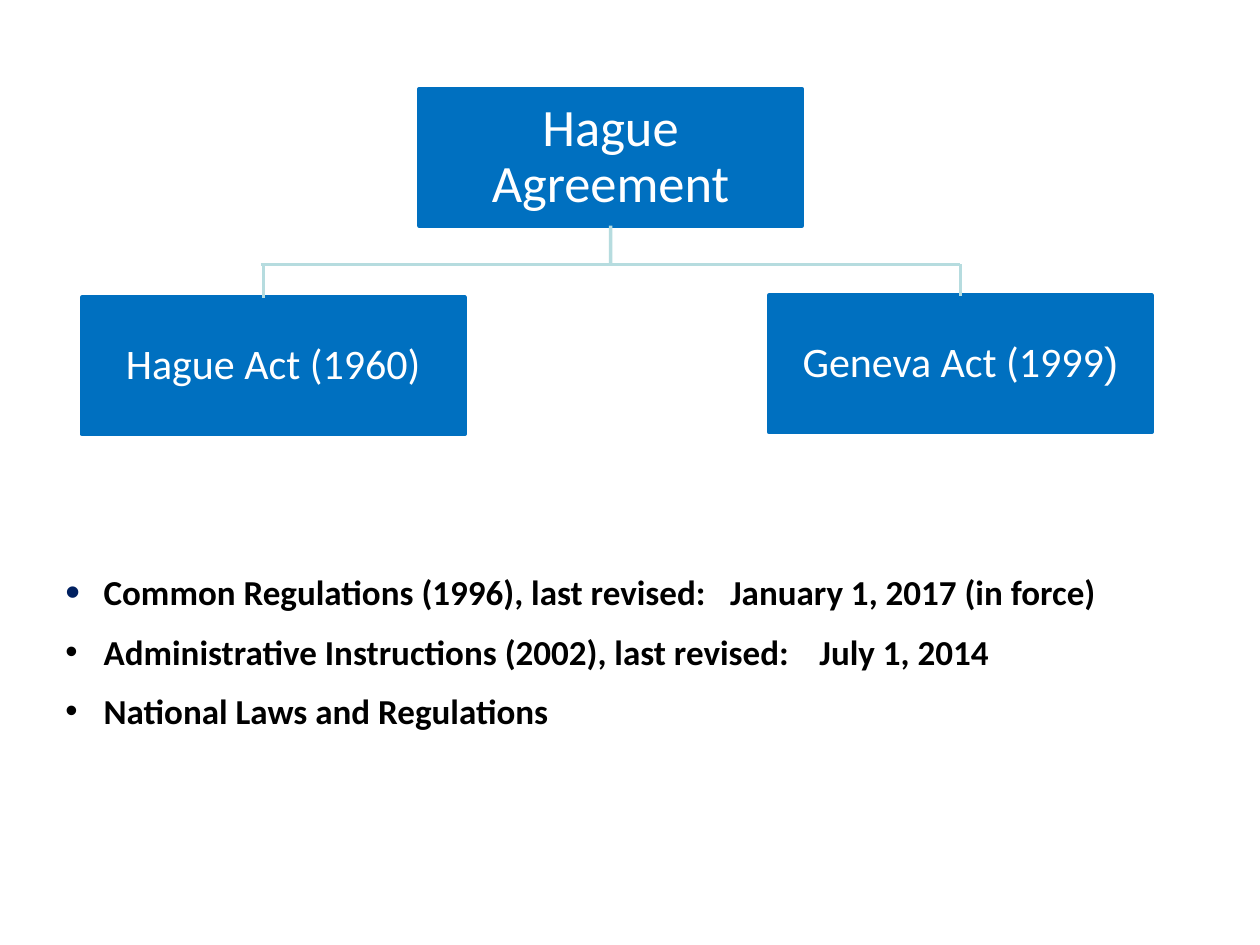
from lxml import etree
from pptx import Presentation
from pptx.dml.color import RGBColor
from pptx.enum.shapes import MSO_CONNECTOR, MSO_SHAPE
from pptx.enum.text import MSO_ANCHOR, PP_ALIGN
from pptx.oxml.ns import qn
from pptx.util import Cm, Pt

RECT = MSO_SHAPE.RECTANGLE
LINE = MSO_CONNECTOR.STRAIGHT
MID = MSO_ANCHOR.MIDDLE
CENTER = PP_ALIGN.CENTER
JUST = PP_ALIGN.JUSTIFY

BLUE = RGBColor(0x00, 0x70, 0xC0)
NAVY = RGBColor(0x00, 0x20, 0x60)
TEAL = RGBColor(0xB6, 0xDC, 0xDF)
WHITE = RGBColor(0xFF, 0xFF, 0xFF)
BLACK = RGBColor(0x00, 0x00, 0x00)
FONT = "Calibri"
TOP, BOTTOM = 0, 2


class Deck:
    def __init__(self, slide):
        self.slide = slide

    def run(self, para, text, size, color, bold=False, font=FONT):
        run = para.add_run()
        run.text = text
        run.font.name = font
        run.font.size = Pt(size)
        run.font.bold = bold
        run.font.color.rgb = color

    def box(self, left, top, size, *parts):
        box = self.slide.shapes.add_shape(RECT, Cm(left), Cm(top), Cm(7.72), Cm(2.75))
        box.shadow.inherit = False
        box.fill.solid()
        box.fill.fore_color.rgb = BLUE
        box.line.color.rgb = BLUE
        box.line.width = Pt(2.5)
        frame = box.text_frame
        frame.word_wrap = True
        frame.vertical_anchor = MID
        frame.margin_left = frame.margin_right = Cm(0.05)
        frame.margin_top = frame.margin_bottom = Cm(0.05)
        para = frame.paragraphs[0]
        para.alignment = CENTER
        para.line_spacing = 0.9
        for text, font in parts:
            self.run(para, text, size, WHITE, font=font)
        return box

    def line(self, x1, y1, x2, y2, start=None, end=None):
        line = self.slide.shapes.add_connector(LINE, Cm(x1), Cm(y1), Cm(x2), Cm(y2))
        if start:
            line.begin_connect(start, BOTTOM)
        if end:
            line.end_connect(end, TOP)
        line.line.color.rgb = TEAL
        line.line.width = Pt(2)
        etree.SubElement(line._element.spPr, qn("a:effectLst"))

    def bullet(self, para, color, scale, stop):
        props = para._p.get_or_add_pPr()
        props.set("marL", str(Cm(0.77)))
        props.set("indent", str(-Cm(0.77)))
        tint = etree.SubElement(props, qn("a:buClr"))
        etree.SubElement(tint, qn("a:srgbClr"), val=str(color))
        etree.SubElement(props, qn("a:buSzPct"), val=str(scale * 1000))
        etree.SubElement(props, qn("a:buFont"), typeface="Arial")
        etree.SubElement(props, qn("a:buChar"), char="•")
        if stop:
            tabs = etree.SubElement(props, qn("a:tabLst"))
            etree.SubElement(tabs, qn("a:tab"), pos=str(Cm(stop)), algn="l")

    def bullets(self, left, top, width, height, items):
        area = self.slide.shapes.add_textbox(Cm(left), Cm(top), Cm(width), Cm(height))
        frame = area.text_frame
        frame.word_wrap = True
        for i, (text, color, scale, stop) in enumerate(items):
            para = frame.add_paragraph() if i else frame.paragraphs[0]
            self.bullet(para, color, scale, stop)
            para.alignment = JUST
            if i:
                para.space_before = Pt(10)
            self.run(para, text, 20, BLACK, bold=True)


def main():
    prs = Presentation()
    prs.slide_width, prs.slide_height = Cm(25.4), Cm(19.05)
    deck = Deck(prs.slides.add_slide(prs.slide_layouts[6]))

    root = deck.box(8.45, 1.8, 30, ("Hague Agreement", FONT))
    deck.box(1.65, 6, 24, ("Hague Act (1960)", FONT))
    geneva = deck.box(15.5, 5.96, 24, ("Geneva Act (1999", FONT), (")", "Arial"))

    deck.bullets(1.07, 11.38, 23.7, 3.66, [
        ("Common Regulations (1996), last revised:\tJanuary 1, 2017 (in force)",
         NAVY, 120, 13.4),
        ("Administrative Instructions (2002), last revised:\tJuly 1, 2014",
         BLACK, 100, 15.2),
        ("National Laws and Regulations", BLACK, 100, None),
    ])

    mid, bar = 12.31, 5.33
    deck.line(mid, 4.55, mid, bar, start=root)
    deck.line(mid, bar, 19.36, bar)
    deck.line(5.26, bar, mid, bar)
    deck.line(5.31, bar, 5.31, 6)
    deck.line(19.36, bar, 19.36, 5.96, end=geneva)
    prs.save("out.pptx")


if __name__ == "__main__":
    main()
